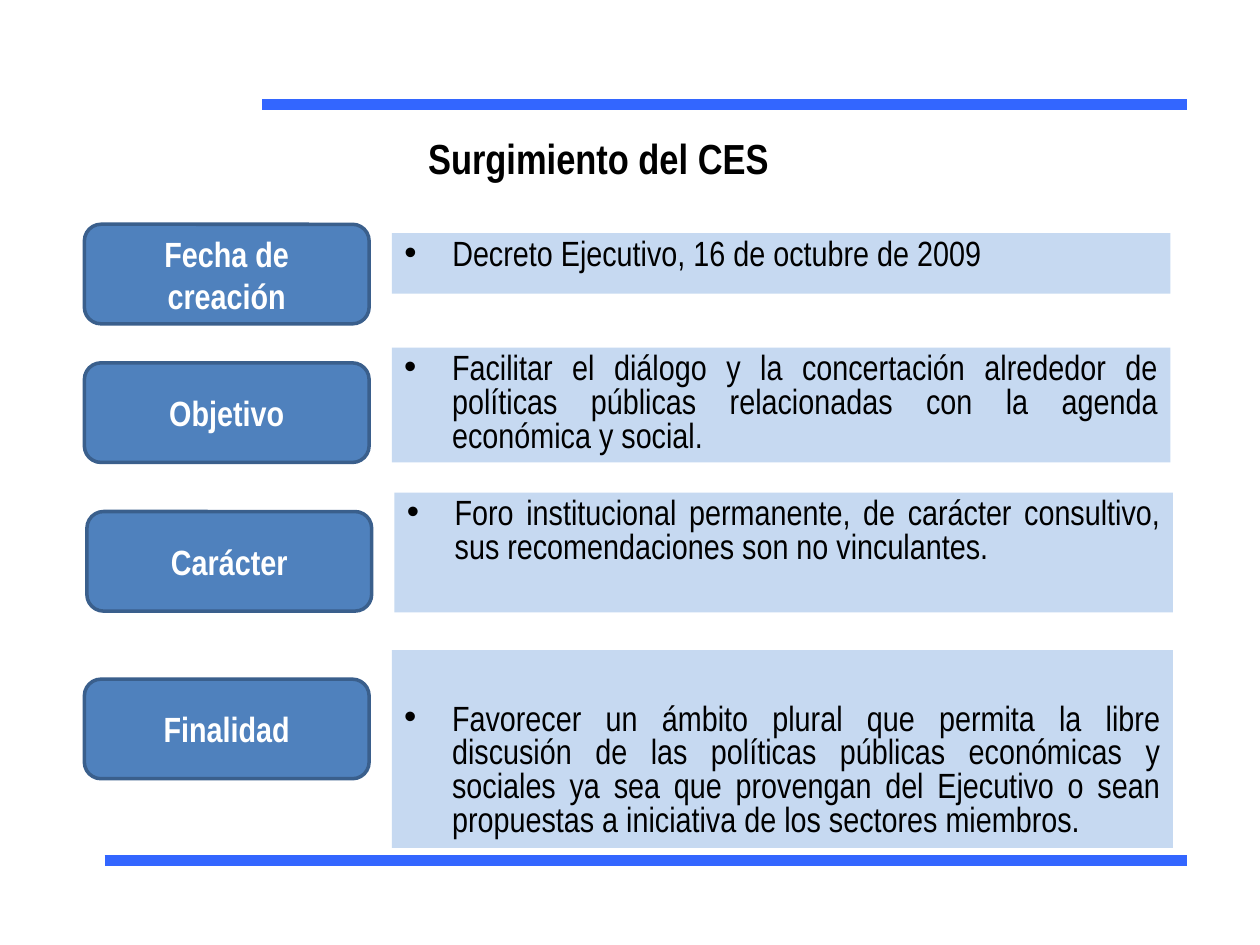
from lxml import etree
from pptx import Presentation
from pptx.dml.color import RGBColor
from pptx.enum.shapes import MSO_CONNECTOR, MSO_SHAPE
from pptx.enum.text import MSO_ANCHOR, MSO_AUTO_SIZE, PP_ALIGN
from pptx.oxml.ns import qn
from pptx.util import Inches, Pt

STRAIGHT = MSO_CONNECTOR.STRAIGHT
RECTANGLE, ROUNDED = MSO_SHAPE.RECTANGLE, MSO_SHAPE.ROUNDED_RECTANGLE
TOP, MIDDLE = MSO_ANCHOR.TOP, MSO_ANCHOR.MIDDLE
CENTER, JUSTIFY = PP_ALIGN.CENTER, PP_ALIGN.JUSTIFY
NO_AUTOFIT = MSO_AUTO_SIZE.NONE

FONT = "Arial Narrow"
COLORS = {
    "rule": "3366FF",
    "panel": "C6D9F1",
    "label": "4F81BD",
    "label_edge": "3A5F8C",
    "dark": "000000",
    "light": "FFFFFF",
}
RULE_RIGHT = 9.42
RULES = [(2.08, 0.83), (0.83, 6.83)]
TITLE_BOX = (2.5, 1, 4.5, 0.5)
LABEL_SIZE = (2.26, 0.79)
INSET = 0.05
ROWS = [
    ("Fecha de creación", (0.67, 1.78), (3.11, 1.85, 6.18, 0.48), INSET,
     "Decreto Ejecutivo, 16 de octubre de 2009"),
    ("Objetivo", (0.67, 2.88), (3.11, 2.76, 6.18, 0.91), INSET,
     "Facilitar el diálogo y la concertación alrededor de políticas públicas "
     "relacionadas con la agenda económica y social."),
    ("Carácter", (0.69, 4.06), (3.13, 3.91, 6.18, 0.95), INSET,
     "Foro institucional permanente, de carácter consultivo, sus "
     "recomendaciones son no vinculantes."),
    ("Finalidad", (0.67, 5.39), (3.11, 5.16, 6.2, 1.57), 0.43,
     "Favorecer un ámbito plural que permita la libre discusión de las "
     "políticas públicas económicas y sociales ya sea que provengan del "
     "Ejecutivo o sean propuestas a iniciativa de los sectores miembros."),
]


def color(name):
    """Return the named colour."""
    return RGBColor.from_string(COLORS[name])


def place(shape, box):
    """Move and size a shape to a box in inches."""
    shape.left, shape.top, shape.width, shape.height = map(Inches, box)


def write(shape, text, size, ink, bold, align, anchor):
    """Write one formatted paragraph into a shape and return it."""
    frame = shape.text_frame
    frame.word_wrap = True
    frame.auto_size = NO_AUTOFIT
    frame.vertical_anchor = anchor
    para = frame.paragraphs[0]
    para.alignment = align
    span = para.add_run()
    span.text = text
    span.font.name = FONT
    span.font.size = Pt(size)
    span.font.bold = bold
    span.font.color.rgb = color(ink)
    return para


def add_bullet(para):
    """Give a paragraph a round bullet with a hanging indent."""
    properties = para._p.get_or_add_pPr()
    properties.set("marL", str(Inches(0.38)))
    properties.set("indent", str(Inches(-0.38)))
    etree.SubElement(properties, qn("a:buFont")).set("typeface", "Arial")
    etree.SubElement(properties, qn("a:buChar")).set("char", "•")


def add_rule(page, left, top):
    """Draw a thick horizontal rule ending at the right margin."""
    rule = page.shapes.add_connector(
        STRAIGHT, Inches(left), Inches(top), Inches(RULE_RIGHT), Inches(top))
    rule.line.color.rgb = color("rule")
    rule.line.width = Pt(6)
    etree.SubElement(rule._element.spPr, qn("a:effectLst"))


def add_title(page, box):
    """Place the slide title."""
    title = page.shapes.title
    place(title, box)
    write(title, "Surgimiento del CES", 24, "dark", True, CENTER, MIDDLE)


def add_label(page, box, text):
    """Draw the rounded label of a row."""
    label = page.shapes.add_shape(ROUNDED, *map(Inches, box))
    label.shadow.inherit = False
    label.fill.solid()
    label.fill.fore_color.rgb = color("label")
    label.line.color.rgb = color("label_edge")
    label.line.width = Pt(2)
    write(label, text, 20, "light", True, CENTER, MIDDLE)


def fill_panel(panel, box, inset, text):
    """Format a panel and write its bulleted description."""
    place(panel, box)
    panel.fill.solid()
    panel.fill.fore_color.rgb = color("panel")
    panel.line.fill.background()
    panel.text_frame.margin_top = Inches(inset)
    para = write(panel, text, 20, "dark", False, JUSTIFY, TOP)
    para.line_spacing = 0.8
    para.space_before = Pt(4)
    add_bullet(para)


def add_panel(page, box):
    """Add an empty rectangle for a description."""
    panel = page.shapes.add_shape(RECTANGLE, *map(Inches, box))
    panel.shadow.inherit = False
    return panel


def main():
    """Build and save the slide."""
    deck = Presentation()
    deck.slide_width, deck.slide_height = Inches(10), Inches(7.5)
    page = deck.slides.add_slide(deck.slide_layouts[1])
    for left, top in RULES:
        add_rule(page, left, top)
    add_title(page, TITLE_BOX)
    for index, (name, corner, box, inset, text) in enumerate(ROWS):
        add_label(page, corner + LABEL_SIZE, name)
        panel = add_panel(page, box) if index else page.placeholders[1]
        fill_panel(panel, box, inset, text)
    deck.save("out.pptx")


if __name__ == "__main__":
    main()
